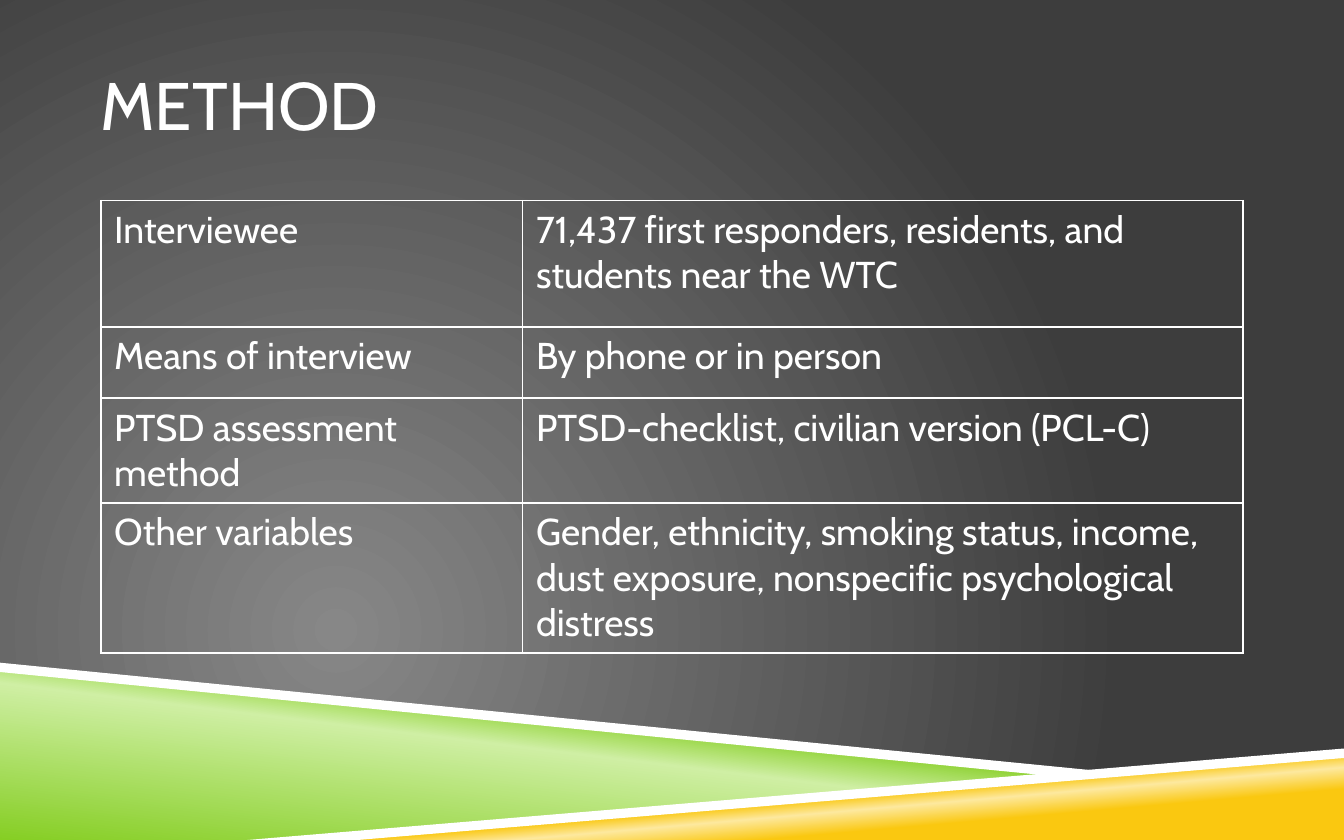
from lxml import etree
from pptx import Presentation
from pptx.dml.color import RGBColor
from pptx.enum.text import MSO_ANCHOR, MSO_AUTO_SIZE, PP_ALIGN
from pptx.oxml.ns import qn
from pptx.util import Pt

LEFT = PP_ALIGN.LEFT
MIDDLE = MSO_ANCHOR.MIDDLE
NO_AUTOFIT = MSO_AUTO_SIZE.NONE
TITLE_ONLY = 5

COLORS = {
    "white": "FFFFFF",
    "gray": "878787",
    "charcoal": "3D3D3D",
    "green": "86CE24",
    "pale_green": "CFEFA4",
    "amber": "FAC810",
    "pale_amber": "FDE99F",
}

METHOD_ROWS = [
    (67.7, "Interviewee", "71,437 first responders, residents, and students near the WTC"),
    (38.2, "Means of interview", "By phone or in person"),
    (38.2, "PTSD assessment method", "PTSD-checklist, civilian version (PCL-C)"),
    (41, "Other variables",
     "Gender, ethnicity, smoking status, income, dust exposure, "
     "nonspecific psychological distress"),
]


def add_child(parent, tag, **attributes):
    return etree.SubElement(parent, qn(tag), attributes)


class SlideBuilder:
    font_name = "Cabin"
    title_size = 36
    body_size = 20
    border_width = 1

    def __init__(self, slide):
        self.slide = slide

    def style(self, paragraph, size):
        paragraph.alignment = LEFT
        paragraph.font.name = self.font_name
        paragraph.font.size = Pt(size)
        paragraph.font.color.rgb = RGBColor.from_string(COLORS["white"])

    def gradient(self, fill, owner, stops, angle=None):
        fill.gradient()
        grad = owner.find(".//" + qn("a:gradFill"))
        for child in list(grad):
            grad.remove(child)
        stop_list = add_child(grad, "a:gsLst")
        for position, color in stops:
            stop = add_child(stop_list, "a:gs", pos=str(position * 1000))
            add_child(stop, "a:srgbClr", val=COLORS[color])
        if angle is None:
            circle = add_child(grad, "a:path", path="circle")
            add_child(circle, "a:fillToRect", l="50000", t="100000", r="100000", b="50000")
        else:
            add_child(grad, "a:lin", ang=str(angle * 60000), scaled="0")

    def background(self, stops):
        self.gradient(self.slide.background.fill, self.slide.element, stops)

    def polygon(self, points, color=None, stops=None, angle=None):
        start, *rest = [(Pt(x), Pt(y)) for x, y in points]
        outline = self.slide.shapes.build_freeform(*start)
        outline.add_line_segments(rest, close=True)
        shape = outline.convert_to_shape()
        shape.shadow.inherit = False
        shape.line.fill.background()
        if stops:
            self.gradient(shape.fill, shape.element, stops, angle)
        else:
            shape.fill.solid()
            shape.fill.fore_color.rgb = RGBColor.from_string(COLORS[color])

    def title(self, text, left, top, width, height):
        heading = self.slide.shapes.title
        heading.left, heading.top = Pt(left), Pt(top)
        heading.width, heading.height = Pt(width), Pt(height)
        frame = heading.text_frame
        frame.text = text
        frame.auto_size = NO_AUTOFIT
        frame.word_wrap = True
        frame.vertical_anchor = MIDDLE
        frame.margin_left = frame.margin_right = 0
        self.style(frame.paragraphs[0], self.title_size)

    def cell_borders(self, cell):
        properties = cell._tc.get_or_add_tcPr()
        for index, side in enumerate(("a:lnL", "a:lnR", "a:lnT", "a:lnB")):
            border = etree.Element(qn(side), w=str(Pt(self.border_width)))
            add_child(add_child(border, "a:solidFill"), "a:srgbClr", val=COLORS["white"])
            properties.insert(index, border)

    def table(self, rows, left, top, column_widths):
        height = sum(row[0] for row in rows)
        table = self.slide.shapes.add_table(
            len(rows), len(column_widths), Pt(left), Pt(top),
            Pt(sum(column_widths)), Pt(height)).table
        table.first_row = table.horz_banding = False
        for column, width in zip(table.columns, column_widths):
            column.width = Pt(width)
        for row, (row_height, *texts) in zip(table.rows, rows):
            row.height = Pt(row_height)
            for cell, text in zip(row.cells, texts):
                cell.text = text
                cell.fill.background()
                self.cell_borders(cell)
                self.style(cell.text_frame.paragraphs[0], self.body_size)


def main():
    deck = Presentation()
    deck.slide_width, deck.slide_height = Pt(720), Pt(450)
    builder = SlideBuilder(deck.slides.add_slide(deck.slide_layouts[TITLE_ONLY]))

    builder.background([(0, "gray"), (100, "charcoal")])
    builder.polygon(
        [(0, 357.8), (570.2, 414.7), (144, 450), (0, 450)],
        stops=[(0, "green"), (52, "pale_green"), (66, "green")], angle=277)
    builder.polygon(
        [(142.6, 450), (720, 403.2), (720, 450)],
        stops=[(28, "amber"), (40, "pale_amber"), (48, "amber")], angle=265)
    builder.polygon([(0, 355), (0, 360), (568.8, 416.2), (599, 414)], color="white")
    builder.polygon([(720, 401), (132.5, 450), (191.5, 450), (720, 406.1)], color="white")

    builder.title("METHOD", 54, 18, 612, 75)
    builder.table(METHOD_ROWS, 54, 107.5, [226, 386])
    deck.save("out.pptx")


if __name__ == "__main__":
    main()
